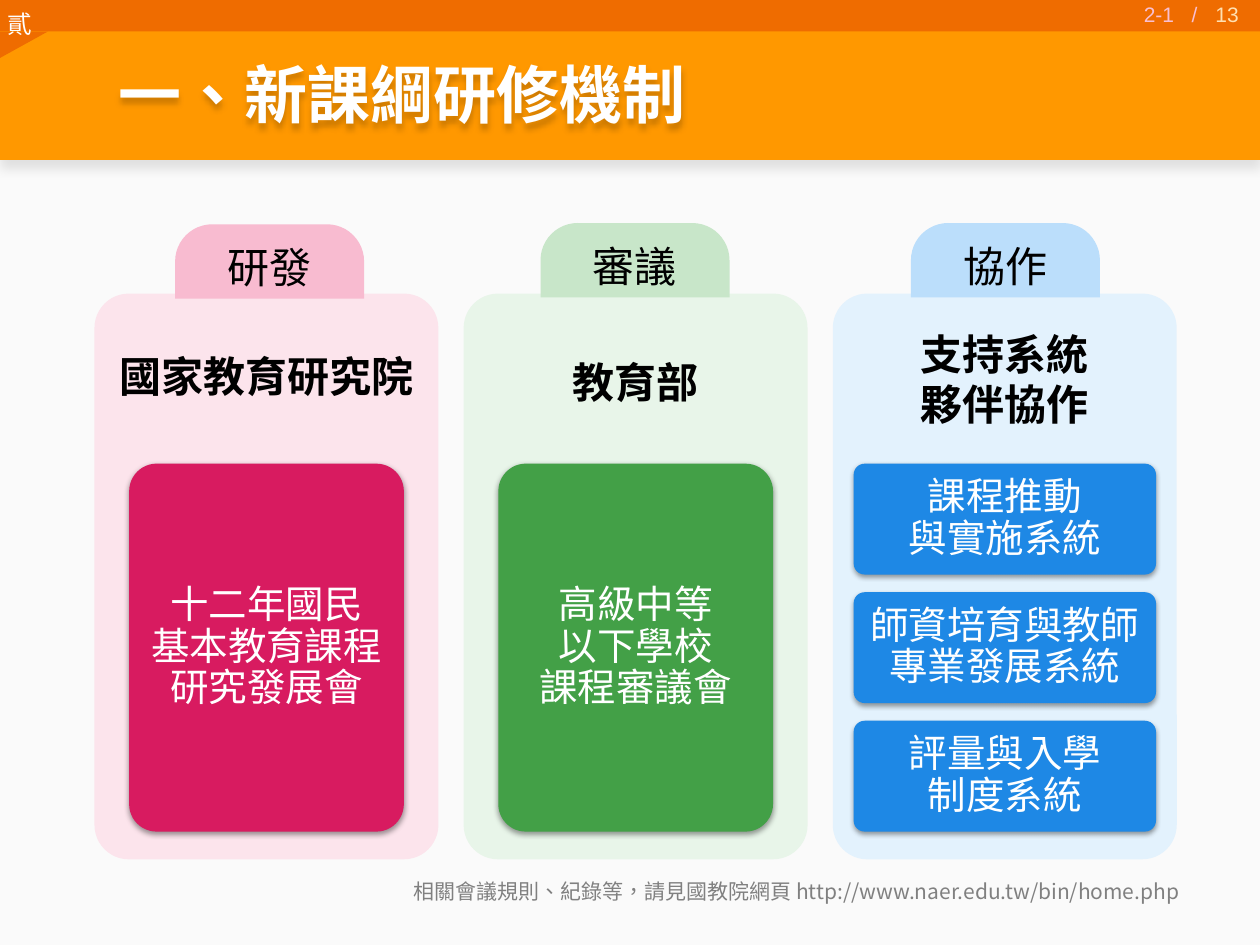
import pptx
import pptx.dml.color
import pptx.enum.shapes
import pptx.enum.text
import pptx.oxml.ns
import pptx.util
from lxml import etree

CJK = "Noto Sans CJK SC"
WIDTH, HEIGHT = 10, 7.5
TITLE = "一、新課綱研修機制"
CHAPTER = "貳"
SECTION, PAGE = "2-1\t/", "13"
FOOTNOTE = "相關會議規則、紀錄等，請見國教院網頁 http://www.naer.edu.tw/bin/home.php"
COLUMNS = [
    {"tab": "研發", "tab_at": (1.39, 1.78), "heading": "國家教育研究院", "spacing": 0.9,
     "colours": ("F8BBD0", "FCE4EC", "D81B60"), "card_width": 2.18,
     "cards": ["十二年國民\n基本教育課程\n研究發展會"]},
    {"tab": "審議", "tab_at": (4.29, 1.77), "heading": "教育部",
     "spacing": pptx.util.Pt(32),
     "colours": ("C8E6C9", "E8F5E9", "43A047"), "card_width": 2.18,
     "cards": ["高級中等\n以下學校\n課程審議會"]},
    {"tab": "協作", "tab_at": (7.23, 1.77), "heading": "支持系統\n夥伴協作",
     "spacing": pptx.util.Pt(28.8),
     "colours": ("BBDEFB", "E3F2FD", "1E88E5"), "card_width": 2.4,
     "cards": ["課程推動\n與實施系統", "師資培育與教師專業發展系統", "評量與入學\n制度系統"]},
]
PANEL_LEFT, PANEL_TOP, PANEL_WIDTH, PANEL_HEIGHT, PANEL_GAP = 0.75, 2.33, 2.73, 4.49, 0.2
HEADING_HEIGHT = 1.35
CARDS_TOP, CARDS_HEIGHT, CARD_GAP = PANEL_TOP + HEADING_HEIGHT, 2.92, 0.14
TAB_WIDTH, TAB_HEIGHT = 1.5, 0.59

SHAPE = pptx.enum.shapes.MSO_SHAPE
ALIGN = pptx.enum.text.PP_ALIGN
ANCHOR = pptx.enum.text.MSO_ANCHOR
qn = pptx.oxml.ns.qn

deck = pptx.Presentation()
deck.slide_width = pptx.util.Inches(WIDTH)
deck.slide_height = pptx.util.Inches(HEIGHT)
slide = deck.slides.add_slide(deck.slide_layouts[5])


def rgb(colour):
    return pptx.dml.color.RGBColor.from_string(colour)


def inches(*lengths):
    return [pptx.util.Inches(length) for length in lengths]


def paint(shape, colour):
    shape.fill.solid()
    shape.fill.fore_color.rgb = rgb(colour)
    shape.line.fill.background()
    shape.shadow.inherit = False


def add_block(kind, box, colour, *adjustments):
    block = slide.shapes.add_shape(kind, *inches(*box))
    paint(block, colour)
    for index, value in enumerate(adjustments):
        block.adjustments[index] = value
    return block


def shade(shape, opacity, blur, distance):
    shape.shadow.inherit = False
    effects = shape.element.spPr.find(qn("a:effectLst"))
    shadow = etree.SubElement(effects, qn("a:outerShdw"), {
        "blurRad": str(pptx.util.Pt(blur)), "dist": str(pptx.util.Pt(distance)),
        "dir": "5400000", "algn": "t", "rotWithShape": "0"})
    black = etree.SubElement(shadow, qn("a:srgbClr"), val="000000")
    etree.SubElement(black, qn("a:alpha"), val=str(opacity * 1000))


def write(shape, text, size, colour, align=ALIGN.CENTER, anchor=ANCHOR.MIDDLE,
          insets=(0.1, 0.05), wrap=True, spacing=None, bold=False, face=CJK):
    frame = shape.text_frame
    frame.word_wrap = wrap
    frame.vertical_anchor = anchor
    frame.margin_left = frame.margin_right = pptx.util.Inches(insets[0])
    frame.margin_top = frame.margin_bottom = pptx.util.Inches(insets[1])
    paragraph = frame.paragraphs[0]
    paragraph.text = text
    paragraph.alignment = align
    paragraph.line_spacing = spacing
    for run in paragraph.runs:
        run.font.size = pptx.util.Pt(size)
        run.font.bold = bold
        run.font.color.rgb = rgb(colour)
        run.font.name = face
        properties = run.font._element
        properties.set("lang", "zh-TW")
        properties.find(qn("a:latin")).addnext(etree.Element(qn("a:ea"), typeface=face))
    return paragraph


def add_text(box, *args, **options):
    return write(slide.shapes.add_textbox(*inches(*box)), *args, **options)


def add_header():
    band = add_block(SHAPE.RECTANGLE, (0, 0, WIDTH, 1.27), "FF9800")
    shade(band, 10, 6, 4)
    add_block(SHAPE.RECTANGLE, (0, 0, WIDTH, 0.25), "EF6C00")
    corner = slide.shapes.build_freeform(0, 25, scale=pptx.util.Inches(0.01))
    corner.add_line_segments([(0, 46), (38, 25)], close=True)
    paint(corner.convert_to_shape(), "EF6C00")
    add_text((-0.04, 0.02, 0.4, 0.34), CHAPTER, 14, "FFFFFF",
             align=ALIGN.LEFT, anchor=ANCHOR.TOP, wrap=False)


def add_column(index, column):
    tab_colour, panel_colour, card_colour = column["colours"]
    left = PANEL_LEFT + index * (PANEL_WIDTH + PANEL_GAP)
    centre = left + PANEL_WIDTH / 2
    add_block(SHAPE.ROUNDED_RECTANGLE, (left, PANEL_TOP, PANEL_WIDTH, PANEL_HEIGHT),
              panel_colour, 0.1)
    add_text((left, PANEL_TOP, PANEL_WIDTH, HEADING_HEIGHT), column["heading"], 24,
             "000000", insets=(0.1, 0.1), spacing=column["spacing"], bold=True)
    tab = add_block(SHAPE.ROUND_2_SAME_RECTANGLE,
                    (*column["tab_at"], TAB_WIDTH, TAB_HEIGHT), tab_colour, 0.5, 0)
    write(tab, column["tab"], 24, "000000", wrap=False)
    count, width = len(column["cards"]), column["card_width"]
    height = (CARDS_HEIGHT - CARD_GAP * (count - 1)) / count
    for row, label in enumerate(column["cards"]):
        top = CARDS_TOP + row * (height + CARD_GAP)
        card = add_block(SHAPE.ROUNDED_RECTANGLE,
                         (centre - width / 2, top, width, height), card_colour, 0.1)
        shade(card, 38, 3.1, 1.6)
        write(card, label, 22, "FFFFFF", insets=(0.06, 0.05), spacing=0.9)


def add_title():
    title = slide.shapes.title
    title.left, title.top, title.width, title.height = inches(0.84, 0.21, 9.16, 1.06)
    write(title, TITLE, 36, "FFFFFF", align=ALIGN.LEFT, bold=True)
    shade(title, 20, 3, 3)
    slide.shapes[-1].element.addnext(title.element)


def add_page_mark():
    section = add_text((8.98, -0.04, 0.7, 0.3), SECTION, 12, "F9BFD2",
                       align=ALIGN.LEFT, face="Arial")
    stops = etree.SubElement(section._p.get_or_add_pPr(), qn("a:tabLst"))
    etree.SubElement(stops, qn("a:tab"), pos=str(pptx.util.Inches(0.38)), algn="l")
    add_text((7.6, -0.09, 2.33, 0.4), PAGE, 12, "FFE0B2", align=ALIGN.RIGHT, face="Arial")


slide.background.fill.solid()
slide.background.fill.fore_color.rgb = rgb("FAFAFA")
add_header()
for position, content in enumerate(COLUMNS):
    add_column(position, content)
add_text((0.35, 6.92, 9.11, 0.3), FOOTNOTE, 12, "808080", align=ALIGN.RIGHT)
add_page_mark()
add_title()
deck.save("out.pptx")
